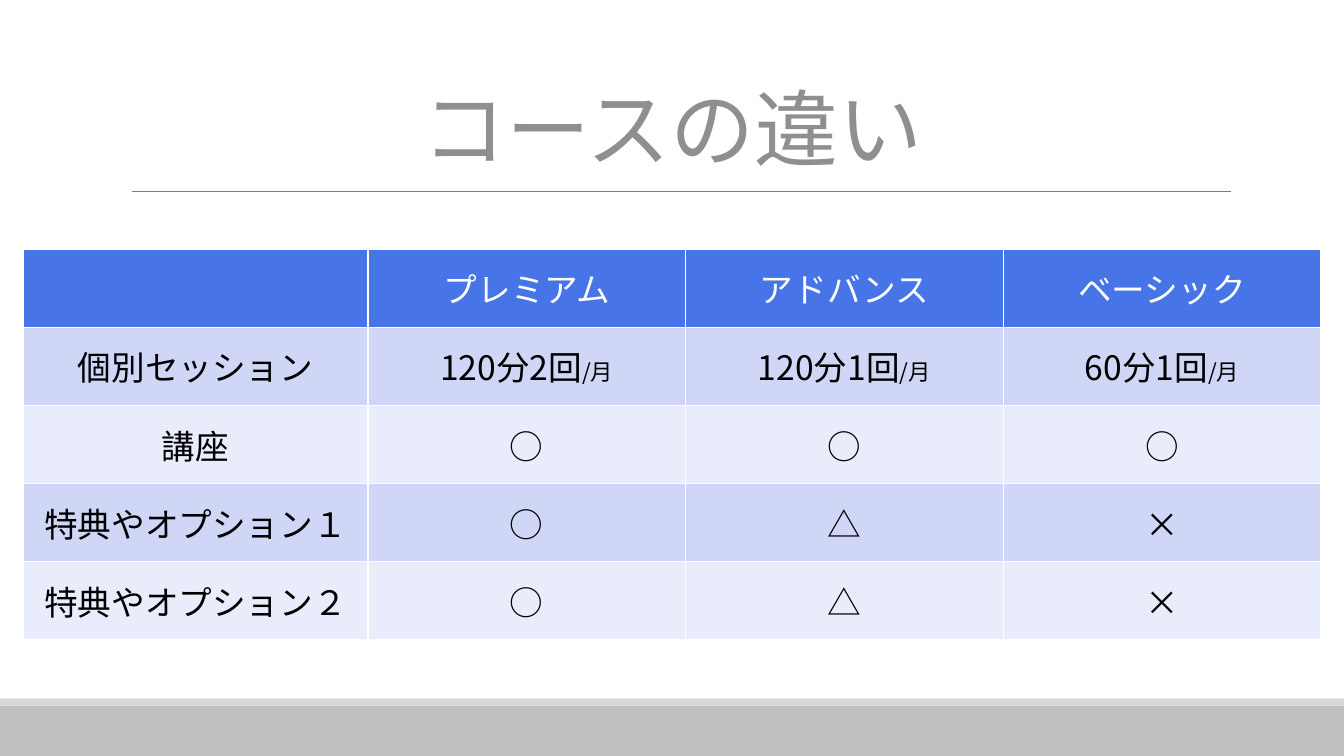
import pptx
import pptx.util
import pptx.dml.color
import pptx.enum.shapes
import pptx.enum.text
import lxml.etree
from pptx.oxml.ns import qn

THEME = {
    "font": "Noto Sans CJK JP",
    "title_size": 60, "cell_size": 24, "unit_size": 16,
    "title": "8F8F8F", "rule": "808080", "text": "000000", "header_text": "FFFFFF",
    "header": "4775E7", "bands": ["CFD6F6", "E9ECFA"],
    "footer": "BFBFBF", "footer_edge": "D8D8D8",
}
WIDTH, HEIGHT = 13.33, 7.5
inches = pptx.util.Inches


def color(name):
    return pptx.dml.color.RGBColor.from_string(name)


def add_span(para, text, size, ink):
    para.alignment = pptx.enum.text.PP_ALIGN.CENTER
    span = para.add_run()
    span.text = text
    span.font.size = pptx.util.Pt(size)
    span.font.bold = False
    span.font.name = THEME["font"]
    span.font.color.rgb = color(ink)
    east_asian = lxml.etree.SubElement(span.font._element, qn("a:ea"))
    east_asian.set("typeface", THEME["font"])


deck = pptx.Presentation()
deck.slide_width, deck.slide_height = inches(WIDTH), inches(HEIGHT)
page = deck.slides.add_slide(deck.slide_layouts[6])

# Footer bands
for top, height, fill in [(7, 0.5, THEME["footer"]), (6.93, 0.07, THEME["footer_edge"])]:
    band = page.shapes.add_shape(pptx.enum.shapes.MSO_SHAPE.RECTANGLE,
                                 0, inches(top), deck.slide_width, inches(height))
    band.shadow.inherit = False
    band.fill.solid()
    band.fill.fore_color.rgb = color(fill)
    band.line.fill.background()

# Title and the rule below it
rule = page.shapes.add_connector(pptx.enum.shapes.MSO_CONNECTOR.STRAIGHT,
                                 inches(1.31), inches(1.9), inches(12.21), inches(1.9))
rule.line.color.rgb = color(THEME["rule"])
rule.line.width = pptx.util.Pt(0.5)
lxml.etree.SubElement(rule._element.spPr, qn("a:effectLst"))

box = page.shapes.add_textbox(inches(1.22), inches(0.7), inches(10.9), inches(1.11))
box.text_frame.word_wrap = True
box.text_frame.vertical_anchor = pptx.enum.text.MSO_ANCHOR.MIDDLE
add_span(box.text_frame.paragraphs[0], "コースの違い", THEME["title_size"], THEME["title"])

# Course table: text after the slash is the small unit
COURSES = [
    ["", "プレミアム", "アドバンス", "ベーシック"],
    ["個別セッション", "120分2回/月", "120分1回/月", "60分1回/月"],
    ["講座", "○", "○", "○"],
    ["特典やオプション１", "○", "△", "×"],
    ["特典やオプション２", "○", "△", "×"],
]
COLUMNS = [3.42, 3.15, 3.15, 3.15]
ROW = 0.776
table = page.shapes.add_table(len(COURSES), len(COLUMNS), inches(0.23), inches(2.47),
                              inches(sum(COLUMNS)), inches(ROW * len(COURSES))).table
for column, width in zip(table.columns, COLUMNS):
    column.width = inches(width)

for r, course_row in enumerate(COURSES):
    fill = THEME["bands"][(r - 1) % 2] if r else THEME["header"]
    ink = THEME["text"] if r else THEME["header_text"]
    for c, text in enumerate(course_row):
        cell = table.cell(r, c)
        cell.vertical_anchor = pptx.enum.text.MSO_ANCHOR.MIDDLE
        cell.fill.solid()
        cell.fill.fore_color.rgb = color(fill)
        amount, slash, unit = text.partition("/")
        para = cell.text_frame.paragraphs[0]
        if amount:
            add_span(para, amount, THEME["cell_size"], ink)
        if unit:
            add_span(para, slash + unit, THEME["unit_size"], ink)

deck.save("out.pptx")
